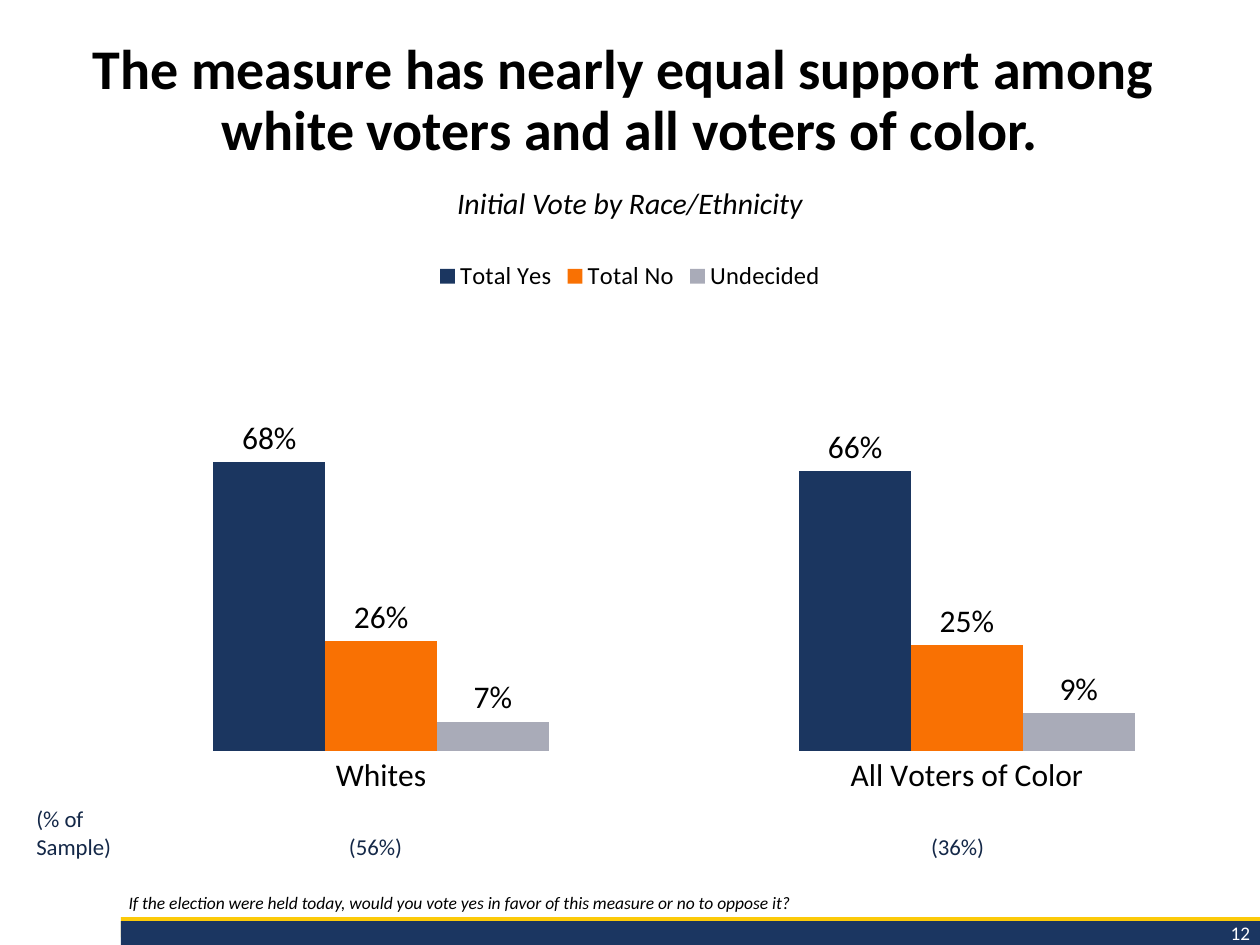
from lxml import etree
from pptx import Presentation
from pptx.chart.data import CategoryChartData
from pptx.dml.color import RGBColor
from pptx.enum import chart as charts, shapes, text
from pptx.oxml.ns import qn
from pptx.util import Inches, Pt

BLACK = RGBColor(0x00, 0x00, 0x00)
WHITE = RGBColor(0xFF, 0xFF, 0xFF)
GOLD = RGBColor(0xFC, 0xCA, 0x09)
NAVY = RGBColor(0x1B, 0x36, 0x61)
INK = RGBColor(0x14, 0x28, 0x48)
YES = RGBColor(0x1B, 0x36, 0x60)
NO = RGBColor(0xF9, 0x71, 0x03)
UNDECIDED = RGBColor(0xA9, 0xAB, 0xB8)

LEFT, CENTER, RIGHT = text.PP_ALIGN.LEFT, text.PP_ALIGN.CENTER, text.PP_ALIGN.RIGHT


def style_font(font, size, color, bold=False, italic=False):
    font.name = "Calibri"
    font.size = Pt(size)
    font.color.rgb = color
    font.bold = bold
    font.italic = italic


def place(shape, left, top, width, height):
    shape.left, shape.top = Inches(left), Inches(top)
    shape.width, shape.height = Inches(width), Inches(height)


def add_band(slide, top, height, color):
    band = slide.shapes.add_shape(shapes.MSO_SHAPE.RECTANGLE, Inches(0.96), Inches(top),
                                  Inches(9.04), Inches(height))
    band.shadow.inherit = False
    band.fill.solid()
    band.fill.fore_color.rgb = color
    band.line.fill.background()


def add_label(slide, wording, box, size, color, align=CENTER, italic=False):
    label = slide.shapes.add_textbox(*map(Inches, box))
    label.text_frame.word_wrap = True
    line = label.text_frame.paragraphs[0]
    line.text = wording
    line.alignment = align
    style_font(line.font, size, color, italic=italic)


def fill_title(slide, wording):
    title = slide.shapes.title
    place(title, 0, 0.2, 10, 1.22)
    title.text_frame.text = wording
    title.text_frame.auto_size = text.MSO_AUTO_SIZE.NONE
    headline = title.text_frame.paragraphs[0]
    headline.alignment = CENTER
    headline.line_spacing = 0.9
    style_font(headline.font, 32, BLACK, bold=True)


def fill_question(slide, wording):
    body = slide.placeholders[1]
    place(body, 0.89, 6.76, 9.09, 0.54)
    frame = body.text_frame
    frame.text = wording
    frame.auto_size = text.MSO_AUTO_SIZE.NONE
    frame.vertical_anchor = text.MSO_ANCHOR.BOTTOM
    frame.margin_left = Inches(0.13)
    question = frame.paragraphs[0]
    question.line_spacing = 0.9
    question.space_before = Pt(0)
    properties = question._p.get_or_add_pPr()
    properties.set("marL", "0")
    properties.set("indent", "0")
    etree.SubElement(properties, qn("a:buNone"))
    style_font(question.font, 10, BLACK, italic=True)


def set_plot_area(chart, **fractions):
    plot_area = chart._chartSpace.chart.plotArea
    for old in plot_area.findall(qn("c:layout")):
        plot_area.remove(old)
    layout = etree.Element(qn("c:layout"))
    plot_area.insert(0, layout)
    manual = etree.SubElement(layout, qn("c:manualLayout"))
    settings = {"layoutTarget": "inner", "xMode": "edge", "yMode": "edge", **fractions}
    for tag, value in settings.items():
        etree.SubElement(manual, qn(f"c:{tag}")).set("val", str(value))


def add_vote_chart(slide, groups, votes):
    data = CategoryChartData(number_format="0%")
    data.categories = groups
    for name, shares, _ in votes:
        data.add_series(name, shares)
    chart = slide.shapes.add_chart(charts.XL_CHART_TYPE.COLUMN_CLUSTERED, Inches(0), Inches(1.96),
                                   Inches(10), Inches(4.5), data).chart
    style_font(chart.font, 10, BLACK)
    chart.has_title = False
    chart.has_legend = True
    chart.legend.position = charts.XL_LEGEND_POSITION.TOP
    chart.legend.include_in_layout = False
    style_font(chart.legend.font, 14, BLACK)
    set_plot_area(chart, x=0.07, y=0.14, w=0.93, h=0.75)

    group_axis = chart.category_axis
    group_axis.major_tick_mark = charts.XL_TICK_MARK.NONE
    group_axis.format.line.fill.background()
    style_font(group_axis.tick_labels.font, 18, BLACK)

    share_axis = chart.value_axis
    share_axis.minimum_scale, share_axis.maximum_scale = 0, 1
    share_axis.major_unit = 0.2
    share_axis.has_major_gridlines = False
    share_axis.visible = False

    plot = chart.plots[0]
    plot.gap_width = 224
    plot.overlap = 0
    plot.vary_by_categories = False
    for series, (_, _, color) in zip(plot.series, votes):
        series.format.fill.solid()
        series.format.fill.fore_color.rgb = color
        labels = series.data_labels
        labels.show_value = True
        labels.number_format = "0%"
        labels.number_format_is_linked = False
        labels.position = charts.XL_LABEL_POSITION.OUTSIDE_END
        style_font(labels.font, 18, BLACK)


def main():
    deck = Presentation()
    deck.slide_width, deck.slide_height = Inches(10), Inches(7.5)
    slide = deck.slides.add_slide(deck.slide_layouts[1])

    add_band(slide, 7.28, 0.16, GOLD)
    add_band(slide, 7.31, 0.19, NAVY)
    add_label(slide, "12", (8.54, 7.26, 1.48, 0.29), 11, WHITE, RIGHT)
    fill_title(slide, "The measure has nearly equal support among \v"
                      "white voters and all voters of color.")
    fill_question(slide, "If the election were held today, would you vote yes "
                         "in favor of this measure or no to oppose it?")
    add_label(slide, "Initial Vote by Race/Ethnicity", (0, 1.42, 10, 0.39), 17, BLACK, italic=True)
    add_vote_chart(slide, ["Whites", "All Voters of Color"], [
        ("Total Yes", (0.68, 0.66), YES),
        ("Total No", (0.26, 0.25), NO),
        ("Undecided", (0.07, 0.09), UNDECIDED),
    ])
    add_label(slide, "(% of Sample)", (0.19, 6.34, 1.04, 0.54), 13, INK, LEFT)
    for left, share in ((2.46, "(56%)"), (7.08, "(36%)")):
        add_label(slide, share, (left, 6.56, 1.04, 0.32), 13, INK)

    deck.save("out.pptx")


if __name__ == "__main__":
    main()
